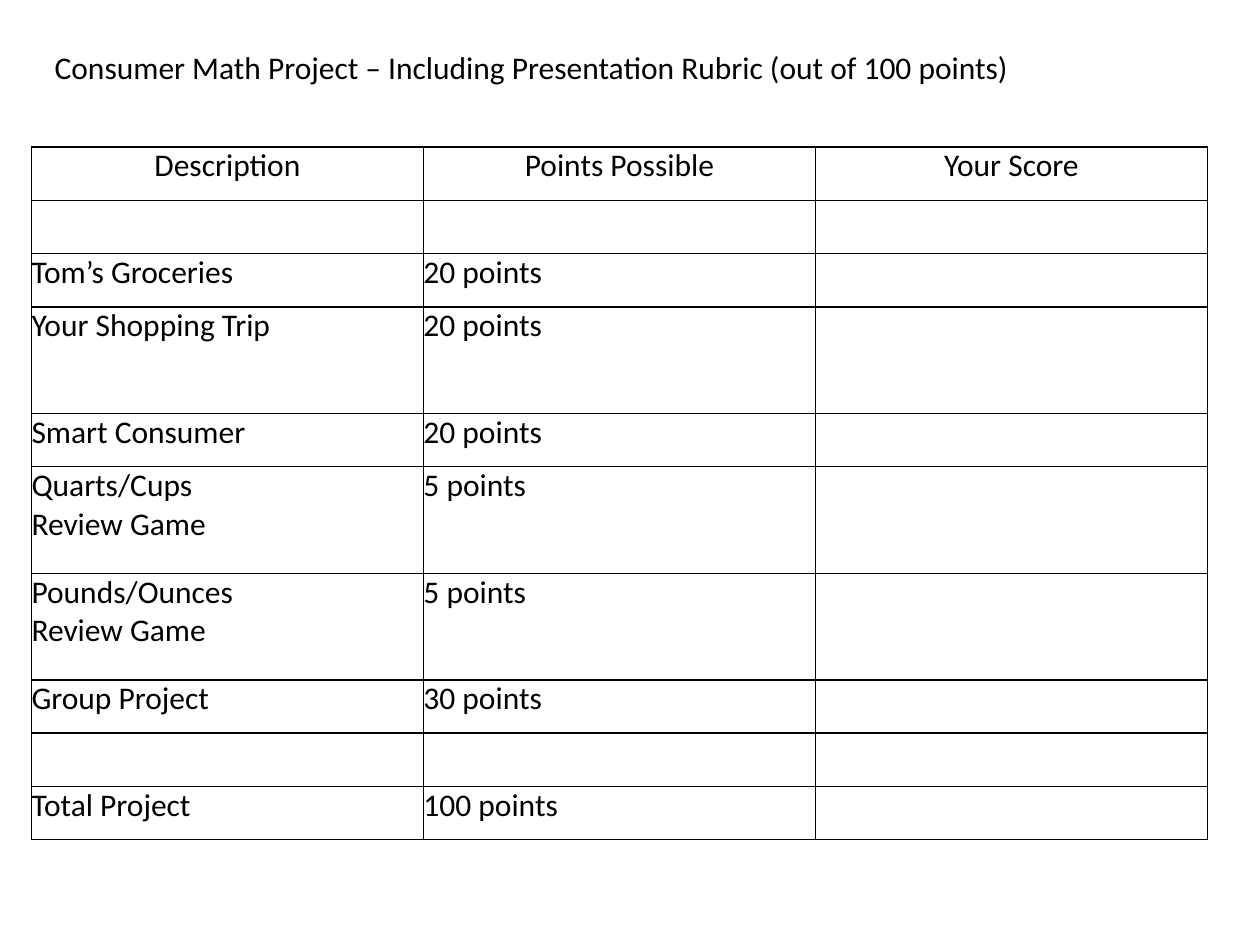
import pptx
import pptx.util
import pptx.dml.color
import pptx.enum.text
import pptx.oxml
import pptx.oxml.ns

Pt = pptx.util.Pt
ALIGN = pptx.enum.text.PP_ALIGN

# Content: description, points possible, score, height in row units
HEADING = "Consumer Math Project – Including Presentation Rubric (out of 100 points)"
RUBRIC = [
    ("Description", "Points Possible", "Your Score", 1),
    ("", "", "", 1),
    ("Tom’s Groceries", "20 points", "", 1),
    ("Your Shopping Trip", "20 points", "", 2),
    ("Smart Consumer", "20 points", "", 1),
    ("Quarts/Cups\nReview Game", "5 points", "", 2),
    ("Pounds/Ounces\nReview Game", "5 points", "", 2),
    ("Group Project", "30 points", "", 1),
    ("", "", "", 1),
    ("Total Project", "100 points", "", 1),
]

# Theme and layout, in points
THEME = {
    "font": {"name": "Calibri", "size": Pt(18), "bold": False},
    "ink": "000000",
    "border": 1,
}
HEADING_BOX = {"left": 24, "top": 24, "width": 654, "height": 30}
RUBRIC_BOX = {"left": 18, "top": 84, "width": 672, "height": 396}


def set_all(target, values):
    for name, value in values.items():
        setattr(target, name, value)


def style_text(frame, align):
    for paragraph in frame.paragraphs:
        paragraph.alignment = align
        set_all(paragraph.font, THEME["font"])
        paragraph.font.color.rgb = pptx.dml.color.RGBColor.from_string(THEME["ink"])


def add_borders(cell):
    properties = cell._tc.get_or_add_tcPr()
    for position, side in enumerate(("lnL", "lnR", "lnT", "lnB")):
        line = pptx.oxml.parse_xml(
            f'<a:{side} {pptx.oxml.ns.nsdecls("a")} w="{Pt(THEME["border"])}">'
            f'<a:solidFill><a:srgbClr val="{THEME["ink"]}"/></a:solidFill></a:{side}>')
        properties.insert(position, line)


def add_heading(slide):
    heading = slide.shapes.title
    set_all(heading, {side: Pt(length) for side, length in HEADING_BOX.items()})
    frame = heading.text_frame
    frame.text = HEADING
    set_all(frame, {
        "word_wrap": True,
        "auto_size": pptx.enum.text.MSO_AUTO_SIZE.NONE,
        "vertical_anchor": pptx.enum.text.MSO_ANCHOR.TOP,
    })
    style_text(frame, ALIGN.LEFT)


def add_rubric(slide):
    column_count = len(RUBRIC[0]) - 1
    box = {side: Pt(length) for side, length in RUBRIC_BOX.items()}
    rubric = slide.shapes.add_table(len(RUBRIC), column_count, **box).table
    set_all(rubric, {"first_row": False, "horz_banding": False})
    for column in rubric.columns:
        column.width = Pt(RUBRIC_BOX["width"] / column_count)

    # Rows share the height according to their units
    unit = RUBRIC_BOX["height"] / sum(units for *_, units in RUBRIC)
    for row_index, (*entries, units) in enumerate(RUBRIC):
        rubric.rows[row_index].height = Pt(unit * units)
        for column_index, entry in enumerate(entries):
            cell = rubric.cell(row_index, column_index)
            cell.text = entry
            set_all(cell, dict.fromkeys(
                ("margin_left", "margin_right", "margin_top", "margin_bottom"), 0))
            cell.fill.background()
            style_text(cell.text_frame, ALIGN.LEFT if row_index else ALIGN.CENTER)
            add_borders(cell)


def main():
    deck = pptx.Presentation()
    set_all(deck, {"slide_width": Pt(720), "slide_height": Pt(540)})
    slide = deck.slides.add_slide(deck.slide_layouts[5])  # Title Only
    add_heading(slide)
    add_rubric(slide)
    deck.save("out.pptx")


if __name__ == "__main__":
    main()
